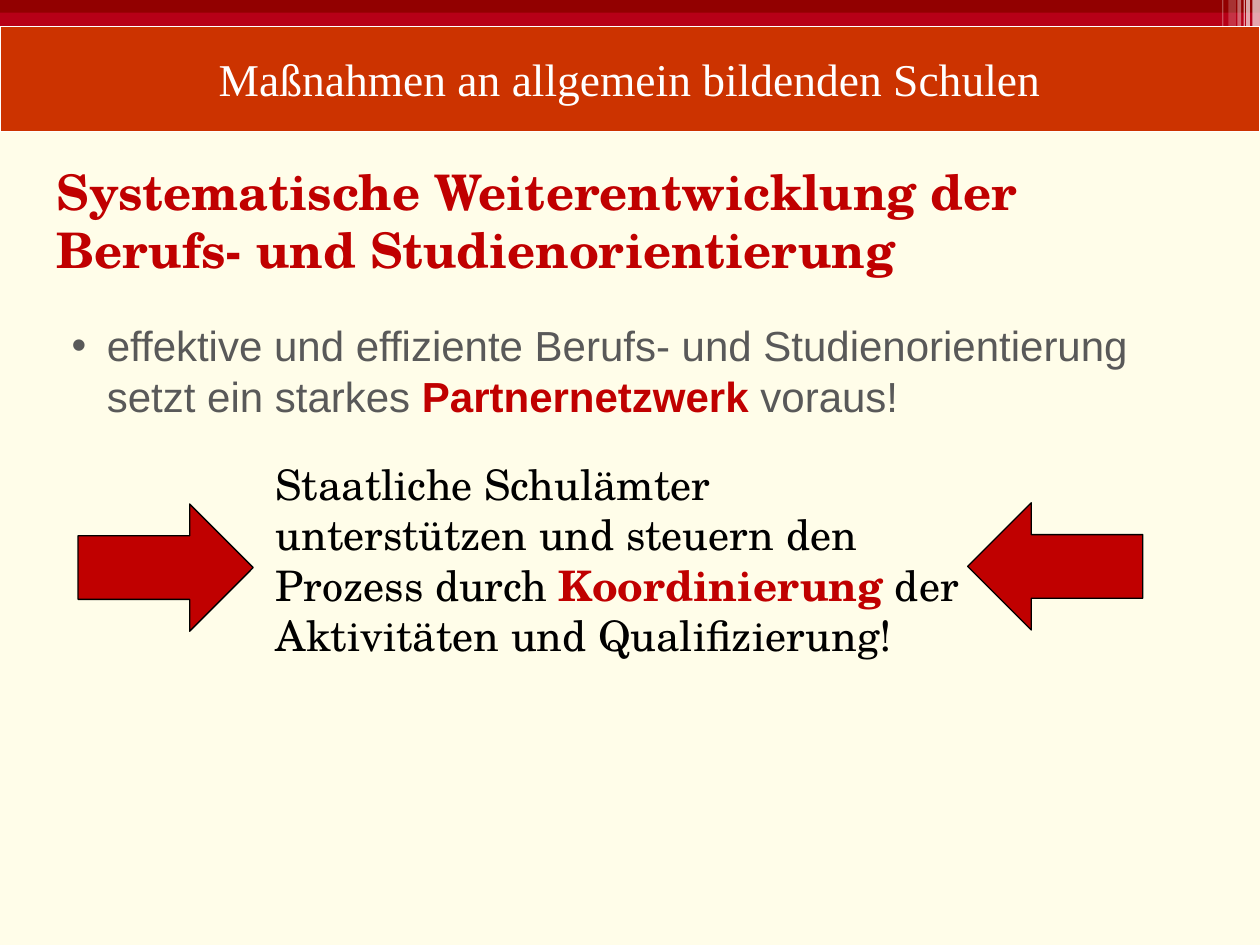
import pptx
import pptx.dml.color
import pptx.enum.shapes
import pptx.enum.text
import pptx.oxml
import pptx.oxml.ns
import pptx.util
from pptx.util import Inches

SHAPE = pptx.enum.shapes.MSO_SHAPE
RED, GREY, BLACK, WHITE = "C00000", "595959", "000000", "FFFFFF"
SERIF = "TeX Gyre Schola"


def color(hex_value):
    """Turn a hex string into a colour."""
    return pptx.dml.color.RGBColor.from_string(hex_value)


def element(parent, tag, **attrs):
    """Append a DrawingML child element to parent."""
    child = pptx.oxml.parse_xml(f"<{tag} {pptx.oxml.ns.nsdecls('a')}/>")
    for name, value in attrs.items():
        child.set(name, str(value))
    parent.append(child)
    return child


def paint(sp, fill, line=None):
    """Set the fill and outline of a shape."""
    sp.fill.solid()
    sp.fill.fore_color.rgb = color(fill)
    if line:
        sp.line.color.rgb = color(line)
        sp.line.width = pptx.util.Pt(0.75)
    else:
        sp.line.fill.background()


def add_shape(slide, kind, box, fill, line=None):
    """Add a flat preset shape in a box given in inches."""
    sp = slide.shapes.add_shape(kind, *map(Inches, box))
    sp.shadow.inherit = False
    paint(sp, fill, line)
    return sp


def add_runs(p, runs, font, size):
    """Add (text, colour, bold) runs to a paragraph."""
    for text, hex_value, bold in runs:
        r = p.add_run()
        r.text = text
        for name, value in dict(name=font, size=pptx.util.Pt(size), bold=bold).items():
            setattr(r.font, name, value)
        r.font.color.rgb = color(hex_value)


def add_text(slide, box, runs, font, size):
    """Add a wrapped text box and return its paragraph."""
    tf = slide.shapes.add_textbox(*map(Inches, box)).text_frame
    tf.word_wrap = True
    p = tf.paragraphs[0]
    add_runs(p, runs, font, size)
    return p


def add_band(slide, box):
    """Draw the top band with its light stripes at the right end."""
    x, y, w, h = box
    add_shape(slide, SHAPE.RECTANGLE, box, "B70017")
    add_shape(slide, SHAPE.RECTANGLE, (x, y, w, 0.1), "920000")
    stripes = [(0.11, 0.03, 0.43, 65), (0.06, 0.06, 0.43, 65), (0.3, 0.01, 0.64, 30),
               (0.13, 0.01, 0.68, 60), (0.25, 0.06, 0.43, 20), (0.18, 0.03, 0.43, 40)]
    for from_right, width, height, opacity in stripes:
        sp = add_shape(slide, SHAPE.RECTANGLE, (x + w - from_right, y, width, height), WHITE)
        fill = sp._element.spPr.find(pptx.oxml.ns.qn("a:solidFill"))
        element(fill[0], "a:alpha", val=opacity * 1000)


def add_title(slide, box, text):
    """Place and format the title placeholder above the band."""
    sp = slide.shapes.title
    sp._element.getparent().append(sp._element)
    for name, value in zip(("left", "top", "width", "height"), box):
        setattr(sp, name, Inches(value))
    paint(sp, "CC3300", WHITE)
    tf = sp.text_frame
    settings = dict(word_wrap=True, vertical_anchor=pptx.enum.text.MSO_ANCHOR.MIDDLE,
                    auto_size=pptx.enum.text.MSO_AUTO_SIZE.SHAPE_TO_FIT_TEXT)
    for name, value in settings.items():
        setattr(tf, name, value)
    p = tf.paragraphs[0]
    p.alignment = pptx.enum.text.PP_ALIGN.CENTER
    element(element(p._p.get_or_add_pPr(), "a:spcAft"), "a:spcPct", val=20000)
    add_runs(p, [(text, WHITE, False)], "Times New Roman", 26)


def add_bullet(slide, box, runs):
    """Add a bulleted statement with a hanging indent."""
    p = add_text(slide, box, runs, "Arial", 24)
    p.space_before = pptx.util.Pt(3)
    pPr = p._p.get_or_add_pPr()
    pPr.set("marL", str(Inches(0.4)))
    pPr.set("indent", str(Inches(-0.28)))
    element(element(pPr, "a:buClr"), "a:srgbClr", val=GREY)
    element(pPr, "a:buFont", typeface="Arial")
    element(pPr, "a:buChar", char="•")


def add_support(slide, box):
    """Add the support statement between two inward arrows."""
    x, y, w, h = box
    runs = [("Staatliche Schulämter unterstützen und steuern den Prozess durch ", BLACK, False),
            ("Koordinierung", RED, True),
            (" der Aktivitäten und Qualifizierung!", BLACK, False)]
    add_text(slide, (x + 1.28, y, 5.67, h), runs, SERIF, 24)
    width, height = 1.01, 1.39
    for left, top, rotation in ((x, y + 0.22, 90), (x + w - width, y + 0.21, 270)):
        sp = add_shape(slide, SHAPE.UP_ARROW, (left, top, width, height), RED, BLACK)
        sp.rotation = rotation
        sp.adjustments[0] = sp.adjustments[1] = 0.5


def main():
    """Build and save the slide."""
    prs = pptx.Presentation()
    prs.slide_width, prs.slide_height = Inches(10), Inches(7.5)
    slide = prs.slides.add_slide(prs.slide_layouts[5])
    slide.background.fill.solid()
    slide.background.fill.fore_color.rgb = color("FFFDE9")
    add_band(slide, (0, 0, 10, 0.34))
    add_title(slide, (0, 0.36, 10, 0.53), "Maßnahmen an allgemein bildenden Schulen")
    add_bullet(slide, (0.35, 2.49, 9.37, 1.02), [
        ("effektive und effiziente Berufs- und Studienorientierung setzt ein starkes ", GREY, False),
        ("Partnernetzwerk", RED, True),
        (" voraus!", GREY, False)])
    heading = "Systematische Weiterentwicklung der Berufs- und Studienorientierung"
    add_text(slide, (0.35, 1.23, 9.37, 1.04), [(heading, RED, True)], SERIF, 28)
    add_support(slide, (0.81, 3.59, 8.07, 2.12))
    prs.save("out.pptx")


if __name__ == "__main__":
    main()
